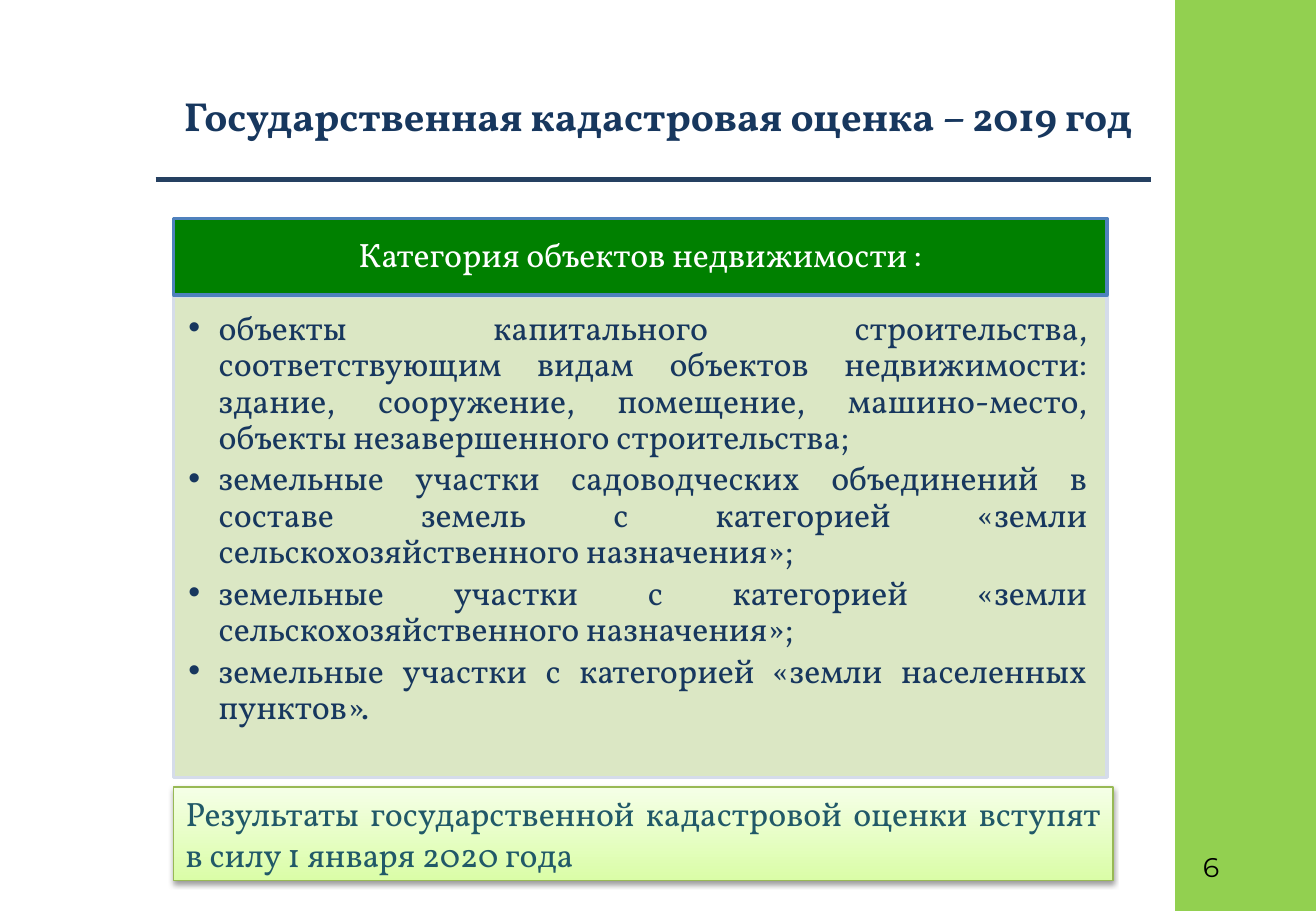
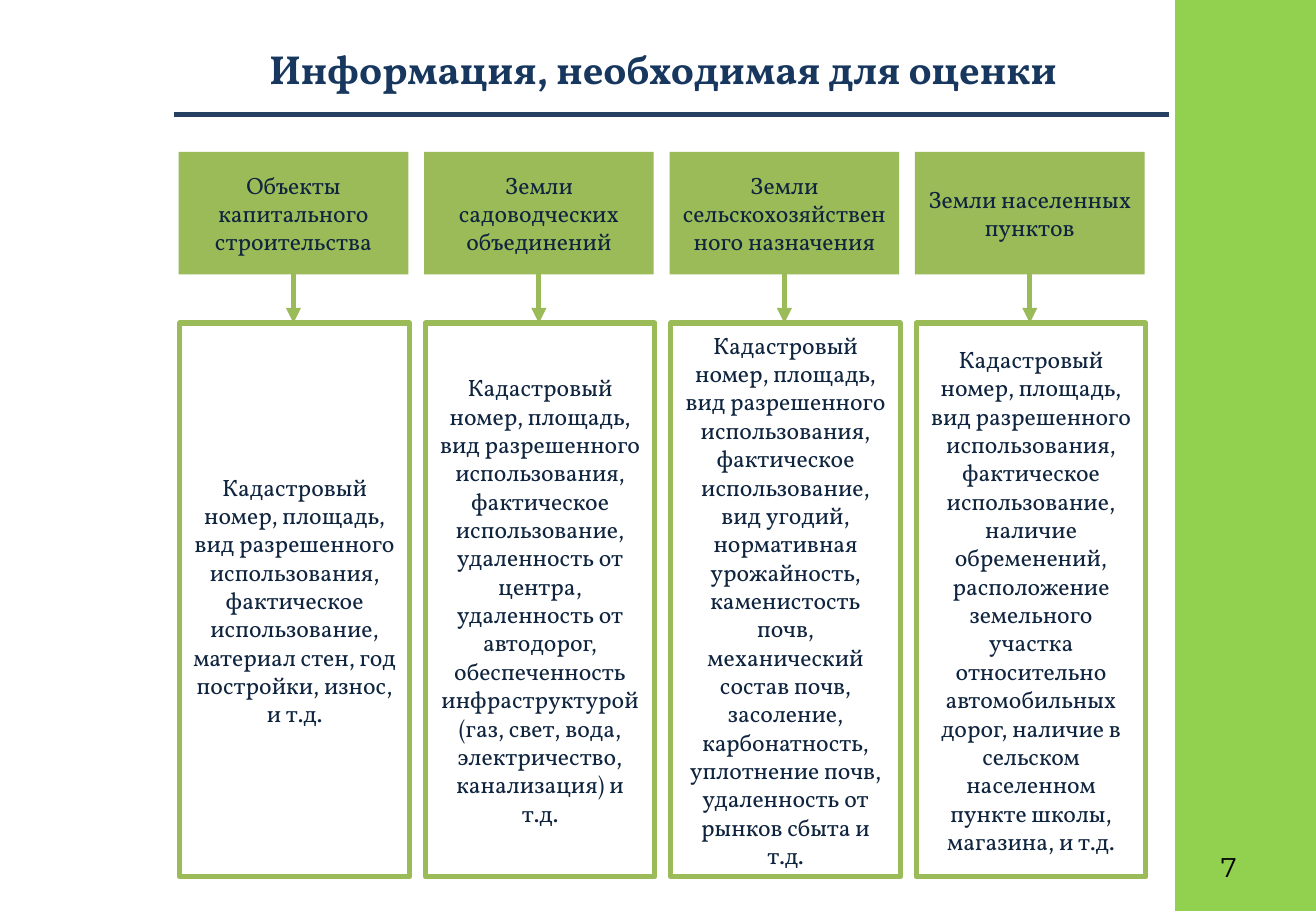
import pptx
import pptx.util
import pptx.dml.color
import pptx.enum.shapes
import pptx.enum.text
import pptx.oxml
from lxml import etree

Inches, Pt = pptx.util.Inches, pptx.util.Pt
RGB = pptx.dml.color.RGBColor
ALIGN = pptx.enum.text.PP_ALIGN
ANCHOR = pptx.enum.text.MSO_ANCHOR
A = "http://schemas.openxmlformats.org/drawingml/2006/main"

WHITE, BLACK = RGB(255, 255, 255), RGB(0, 0, 0)
NAVY = RGB(0x17, 0x37, 0x5E)
RULE_BLUE = RGB(0x25, 0x40, 0x61)
INK = RGB(0x0F, 0x24, 0x3E)
TEAL = RGB(0x21, 0x59, 0x68)
BAND_GREEN = RGB(0x92, 0xD0, 0x50)
OLIVE = RGB(0x9B, 0xBB, 0x59)
HEADER_GREEN = RGB(0x00, 0x80, 0x00)
HEADER_EDGE = RGB(0x4F, 0x81, 0xBD)
PANEL, PANEL_EDGE = RGB(0xDB, 0xE7, 0xC4), RGB(0xD5, 0xDC, 0xEA)
NOTE_DARK, NOTE_LIGHT = RGB(0xDA, 0xFD, 0xA7), RGB(0xF5, 0xFF, 0xE7)
NOTE_EDGE = RGB(0x98, 0xB9, 0x55)

FONT, NUMBER_FONT = "Vollkorn", "Montserrat"
TITLE_AND_BODY, TITLE_ONLY = 1, 5

HEADER = "Категория объектов недвижимости :"
CATEGORIES = [
    "объекты капитального строительства, соответствующим видам объектов недвижимости: "
    "здание, сооружение, помещение, машино-место, объекты незавершенного строительства;",
    "земельные участки садоводческих объединений в составе земель с категорией "
    "«земли сельскохозяйственного назначения»;",
    "земельные участки с категорией «земли сельскохозяйственного назначения»;",
    "земельные участки с категорией «земли населенных пунктов».",
]
NOTE = "Результаты государственной кадастровой оценки вступят в силу 1 января 2020 года"

COMMON = ("Кадастровый номер, площадь, вид разрешенного использования, "
          "фактическое использование, ")
COLUMNS = [
    ("Объекты капитального строительства",
     "материал стен, год постройки, износ, и т.д."),
    ("Земли садоводческих объединений",
     "удаленность от центра, удаленность от автодорог, обеспеченность "
     "инфраструктурой (газ, свет, вода, электричество, канализация) и т.д."),
    ("Земли сельскохозяйственного назначения",
     "вид угодий, нормативная урожайность, каменистость почв, механический состав "
     "почв, засоление, карбонатность, уплотнение почв, удаленность от рынков сбыта и т.д."),
    ("Земли населенных пунктов",
     "наличие обременений, расположение земельного участка относительно автомобильных "
     "дорог, наличие в сельском населенном пункте школы, магазина, и т.д."),
]


def write(tf, *texts, size=20, color=NAVY, font=FONT, bold=False, align=ALIGN.CENTER,
          anchor=ANCHOR.TOP, spacing=1.0, after=0, wrap=True):
    tf.word_wrap = wrap
    tf.auto_size = pptx.enum.text.MSO_AUTO_SIZE.NONE
    tf.vertical_anchor = anchor
    for i, text in enumerate(texts):
        p = tf.add_paragraph() if i else tf.paragraphs[0]
        p.alignment, p.line_spacing = align, spacing
        p.space_before, p.space_after = Pt(0), Pt(after)
        r = p.add_run()
        r.text = text
        r.font.name, r.font.size, r.font.bold = font, Pt(size), bold
        r.font.color.rgb = color


def place(sp, left, top, width, height):
    sp.left, sp.top, sp.width, sp.height = map(Inches, (left, top, width, height))


def paint(sp, fill=None, line=None, width=1):
    if fill is not None:
        sp.fill.solid()
        sp.fill.fore_color.rgb = fill
    if line is None:
        sp.line.fill.background()
    else:
        sp.line.color.rgb = line
        sp.line.width = Pt(width)


def add_box(s, box, **colors):
    sp = s.shapes.add_shape(pptx.enum.shapes.MSO_SHAPE.RECTANGLE, *map(Inches, box))
    paint(sp, **colors)
    sp.shadow.inherit = False
    return sp


def add_line(s, start, end, color, arrow=False):
    cn = s.shapes.add_connector(pptx.enum.shapes.MSO_CONNECTOR.STRAIGHT,
                                *map(Inches, start + end))
    cn.line.color.rgb = color
    cn.line.width = Pt(3)
    if arrow:
        etree.SubElement(cn.line._get_or_add_ln(), f"{{{A}}}tailEnd", type="triangle")
    etree.SubElement(cn._element.spPr, f"{{{A}}}effectLst")


def add_slide(prs, layout, title, title_box, rule_left, rule_top, number, number_left):
    """Add a slide with the shared band, title, rule and page number."""
    s = prs.slides.add_slide(prs.slide_layouts[layout])
    add_box(s, (9.67, 0, 1.16, 7.5), fill=BAND_GREEN)
    place(s.shapes.title, *title_box)
    write(s.shapes.title.text_frame, title, size=24, bold=True)
    add_line(s, (rule_left, rule_top), (rule_left + 8.19, rule_top), RULE_BLUE)
    tb = s.shapes.add_textbox(*map(Inches, (number_left, 6.95, 0.5, 0.37)))
    write(tb.text_frame, number, size=16, color=BLACK, font=NUMBER_FONT, align=ALIGN.LEFT)
    return s


def add_soft_shadow(sp):
    effects = sp._element.spPr.find(f"{{{A}}}effectLst")
    effects.append(pptx.oxml.parse_xml(
        f'<a:outerShdw xmlns:a="{A}" blurRad="40000" dist="20000" dir="5400000" '
        'rotWithShape="0"><a:srgbClr val="000000"><a:alpha val="38000"/></a:srgbClr>'
        '</a:outerShdw>'))


def build_categories(prs):
    s = add_slide(prs, TITLE_AND_BODY, "Государственная кадастровая оценка – 2019 год",
                  (1.35, 0.7, 8.13, 0.5), 1.28, 1.48, "6", 9.8)
    left, width = 1.43, 7.68

    header = add_box(s, (left, 1.8, width, 0.63), fill=HEADER_GREEN, line=HEADER_EDGE, width=2)
    write(header.text_frame, HEADER, color=WHITE, anchor=ANCHOR.MIDDLE, spacing=0.9)

    body = s.placeholders[1]
    place(body, left, 2.44, width, 3.96)
    paint(body, fill=PANEL, line=PANEL_EDGE, width=2)
    tf = body.text_frame
    tf.margin_left = tf.margin_top = Inches(0.12)
    tf.margin_right = tf.margin_bottom = Inches(0.16)
    write(tf, *CATEGORIES, align=ALIGN.JUSTIFY, spacing=0.9, after=3)
    for p in tf.paragraphs:
        pPr = p._p.get_or_add_pPr()
        pPr.set("marL", str(Inches(0.25)))
        pPr.set("indent", str(-Inches(0.25)))

    note = add_box(s, (left, 6.48, 7.73, 0.77), line=NOTE_EDGE, width=0.75)
    note.fill.gradient()
    note.fill.gradient_angle = 90
    for stop, color in zip(note.fill.gradient_stops, (NOTE_DARK, NOTE_LIGHT)):
        stop.color.rgb = color
    add_soft_shadow(note)
    write(note.text_frame, NOTE, color=TEAL, align=ALIGN.JUSTIFY)


def build_information(prs):
    s = add_slide(prs, TITLE_ONLY, "Информация, необходимая для оценки",
                  (1.51, 0.31, 7.89, 0.5), 1.43, 0.94, "7", 9.95)
    width, pitch = 1.89, 2.02
    head_top, head_height, detail_top = 1.25, 1.01, 2.66
    for i, (heading, details) in enumerate(COLUMNS):
        left = 1.47 + i * pitch
        head = add_box(s, (left, head_top, width, head_height), fill=OLIVE)
        detail = add_box(s, (left + 0.01, detail_top, width, 4.56),
                         fill=WHITE, line=OLIVE, width=3)
        for sp, text in ((head, heading), (detail, COMMON + details)):
            write(sp.text_frame, text, size=14, color=INK, anchor=ANCHOR.MIDDLE)
        middle = left + width / 2
        add_line(s, (middle, head_top + head_height), (middle, detail_top), OLIVE, arrow=True)


def main():
    prs = pptx.Presentation()
    prs.slide_width, prs.slide_height = Inches(10.83), Inches(7.5)
    build_categories(prs)
    build_information(prs)
    prs.save("out.pptx")


if __name__ == "__main__":
    main()
